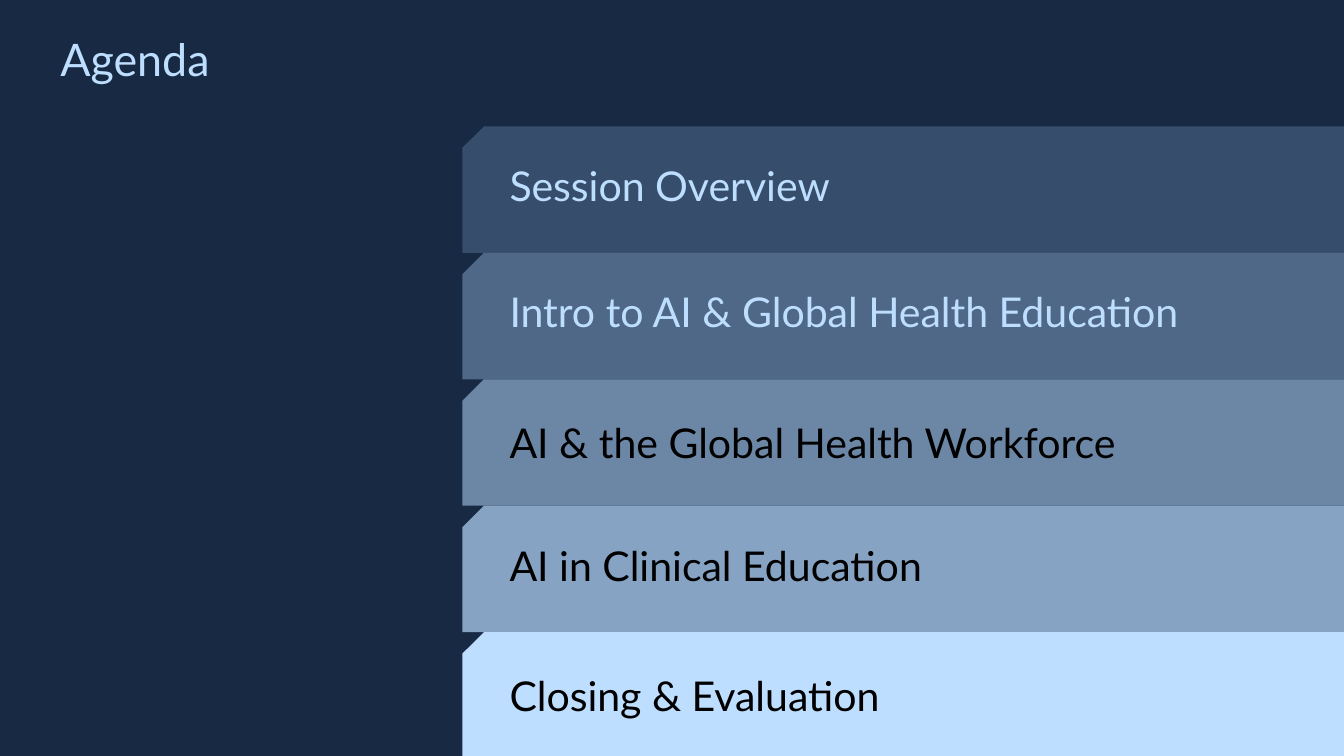
from pptx import Presentation
from pptx import util as u
from pptx.dml import color
from pptx.enum import shapes, text

NAVY, SKY, BLACK = "182A43", "BEDEFF", "000000"


def rgb(value):
    return color.RGBColor.from_string(value)


class Deck:
    """Agenda style and the current slide."""

    font = "Lato"
    bar_left, bar_width, bar_height = 8.74, 16.66, 2.39
    label_left, label_width, label_height = 9.63, 15.72, 1.27

    def __init__(self):
        self.prs = Presentation()
        self.prs.slide_width, self.prs.slide_height = u.Cm(25.4), u.Cm(14.29)

    def add_slide(self):
        self.s = self.prs.slides.add_slide(self.prs.slide_layouts[5])
        fill = self.s.background.fill
        fill.solid()
        fill.fore_color.rgb = rgb(NAVY)

    def set_text(self, sp, words, size, hue, anchor):
        tf = sp.text_frame
        tf.word_wrap = True
        tf.auto_size = text.MSO_AUTO_SIZE.NONE
        tf.vertical_anchor = anchor
        tf.margin_left = tf.margin_top = tf.margin_bottom = 0
        tf.margin_right = u.Cm(0.25)
        p = tf.paragraphs[0]
        p.text = words
        p.alignment = text.PP_ALIGN.LEFT
        p.line_spacing = 0.8
        p.font.name, p.font.size = self.font, u.Pt(size)
        p.font.color.rgb = rgb(hue)

    def title(self, words):
        sp = self.s.shapes.title
        sp.left, sp.top = u.Cm(1.14), u.Cm(0.79)
        sp.width, sp.height = u.Cm(6), u.Cm(1.27)
        self.set_text(sp, words, 24, SKY, text.MSO_ANCHOR.TOP)

    def bar(self, top, hue):
        sp = self.s.shapes.add_shape(
            shapes.MSO_SHAPE.SNIP_1_RECTANGLE, u.Cm(self.bar_left), u.Cm(top),
            u.Cm(self.bar_width), u.Cm(self.bar_height))
        sp.adjustments[0] = 0.17
        sp.shadow.inherit = False
        sp.fill.solid()
        sp.fill.fore_color.rgb = rgb(hue)
        sp.line.fill.background()
        # Mirror the shape so the cut corner is at top left
        sp._element.spPr.xfrm.set("flipH", "1")

    def label(self, top, words, hue):
        sp = self.s.shapes.add_textbox(
            u.Cm(self.label_left), u.Cm(top),
            u.Cm(self.label_width), u.Cm(self.label_height))
        self.set_text(sp, words, 22, hue, text.MSO_ANCHOR.MIDDLE)


# Agenda items: words, text colour, bar colour, label top
ITEMS = [
    ("Session Overview", SKY, "364D6C", 2.95),
    ("Intro to AI & Global Health Education", SKY, "4F6887", 5.33),
    ("AI & the Global Health Workforce", BLACK, "6C87A6", 7.8),
    ("AI in Clinical Education", BLACK, "86A3C3", 10.13),
    ("Closing & Evaluation", BLACK, SKY, 12.6),
]


def main():
    deck = Deck()
    deck.add_slide()
    deck.title("Agenda")

    # Stacked bars, each starting where the one above ends
    for row, (words, hue, bar_hue, label_top) in enumerate(ITEMS, start=1):
        deck.bar(row * deck.bar_height, bar_hue)
        deck.label(label_top, words, hue)

    deck.prs.save("out.pptx")


if __name__ == "__main__":
    main()
